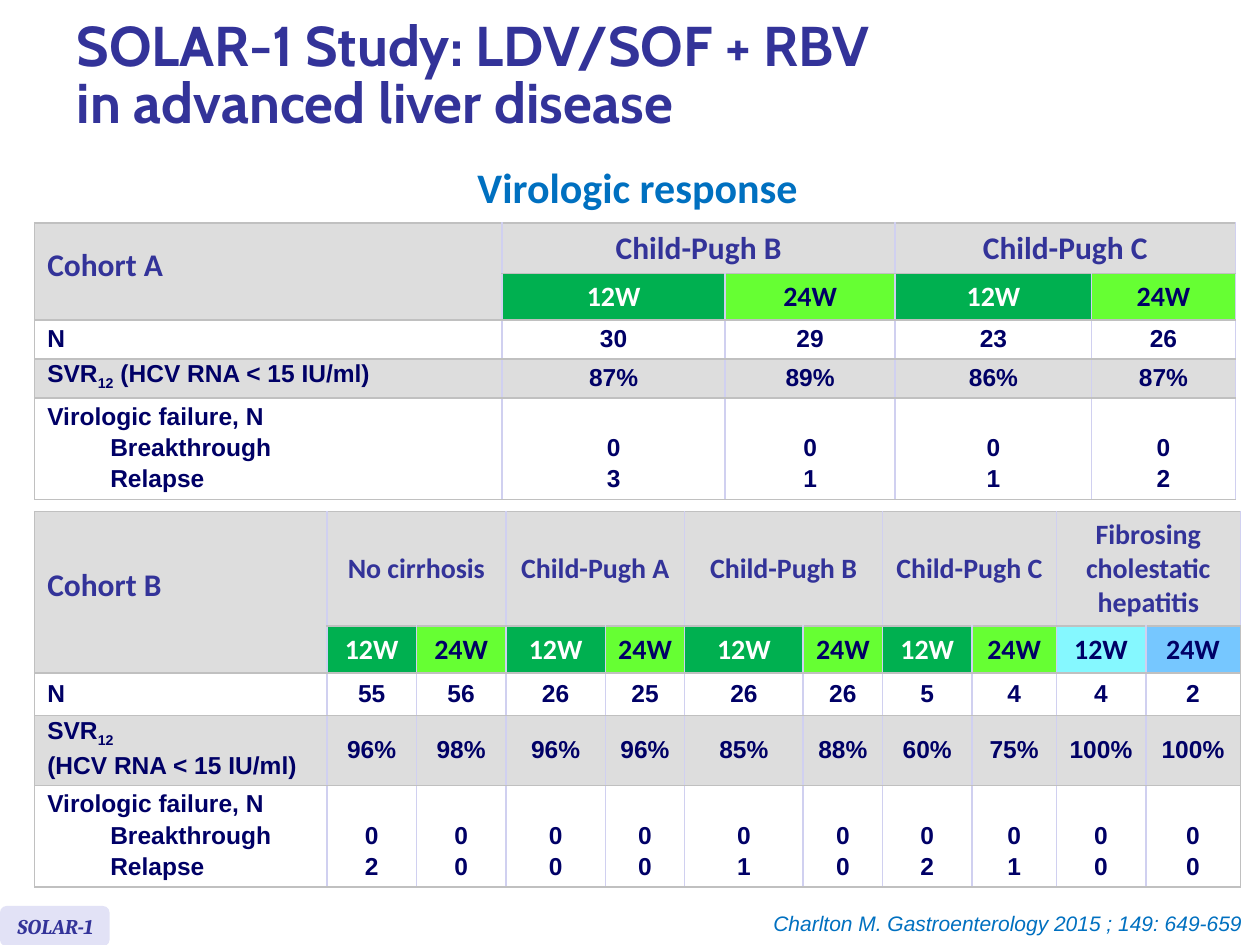
from lxml import etree
from pptx import Presentation, util as u
from pptx.dml.color import RGBColor
from pptx.enum import shapes, text
from pptx.oxml.ns import qn

COLOURS = dict(indigo="333399", navy="000066", blue="0070C0", white="FFFFFF", grey="DDDDDD",
               green="00B050", lime="66FF33", cyan="85F8FF", sky="76C7FF", badge="E2E2F6",
               rule="C0C0C0", divider="D0D0F0")
LEFT, CENTRE, RIGHT = text.PP_ALIGN.LEFT, text.PP_ALIGN.CENTER, text.PP_ALIGN.RIGHT
TITLE = dict(name="Cabin", size=32, bold=True, colour="indigo", align=LEFT, leading=0.85)
HEADING = dict(name="Calibri", size=24, bold=True, colour="blue", align=CENTRE, leading=u.Pt(15.2))
CITATION = dict(name="Arial", size=12, italic=True, colour="blue", align=RIGHT)
BADGE = dict(name="Cambria", size=12, bold=True, italic=True, colour="indigo", align=LEFT)
GROUP = dict(name="Calibri", size=18, bold=True, colour="indigo", align=CENTRE)
COHORT = dict(GROUP, align=LEFT, leading=u.Pt(15))
WEEKS = dict(GROUP, size=16)
VALUE = dict(name="Arial", size=14, bold=True, colour="navy", align=CENTRE, leading=u.Pt(15))
LABEL = dict(VALUE, align=LEFT)
GAP = u.Pt(2.8)
SUBSCRIPT = "₁₂"


def grid(*counts):
    """Turn counts of grid cells, 100 across and 75 down the slide, into lengths."""
    return [int(n * deck.slide_width / 100) for n in counts]


def write(frame, wording, style):
    """Fill a frame: \\n starts a paragraph, \\v breaks a line, SUBSCRIPT is lowered."""
    for i, paragraph in enumerate(wording.split("\n")):
        p = frame.paragraphs[0] if i == 0 else frame.add_paragraph()
        p.alignment = style["align"]
        if "leading" in style:
            p.line_spacing = style["leading"]
        if i:
            p.space_before = GAP
        for j, line in enumerate(paragraph.split("\v")):
            if j:
                p.add_line_break()
            for piece in filter(None, line.partition(SUBSCRIPT)):
                run = p.add_run()
                run.text = "12" if piece == SUBSCRIPT else piece
                run.font.size = u.Pt(style["size"])
                run.font.color.rgb = RGBColor.from_string(COLOURS[style["colour"]])
                for key in ("name", "bold", "italic"):
                    setattr(run.font, key, style.get(key))
                if piece == SUBSCRIPT:
                    run.font._element.set("baseline", "-25000")


deck = Presentation()
deck.slide_width, deck.slide_height = u.Inches(10), u.Inches(7.5)
slide = deck.slides.add_slide(deck.slide_layouts[5])

title = slide.shapes.title
title.left, title.top, title.width, title.height = grid(5.1, 0.8, 91.3, 10.7)
title.text_frame.auto_size = text.MSO_AUTO_SIZE.NONE
title.text_frame.vertical_anchor = text.MSO_ANCHOR.MIDDLE
write(title.text_frame, "SOLAR-1 Study: LDV/SOF + RBV\vin advanced liver disease", TITLE)

badge = slide.shapes.add_group_shape()
plate = badge.shapes.add_shape(shapes.MSO_SHAPE.ROUNDED_RECTANGLE, *grid(0, 71.9, 8.7, 3.2))
plate.shadow.inherit = False
plate.fill.solid()
plate.fill.fore_color.rgb = RGBColor.from_string(COLOURS["badge"])
plate.line.fill.background()

for parent, place, wording, style in (
    (slide, (1.2, 14.2, 98.8, 3.5), "Virologic response", HEADING),
    (slide, (59.4, 71.8, 40.2, 3), "Charlton M. Gastroenterology 2015 ; 149: 649-659", CITATION),
    (badge, (0.4, 72, 11, 3), "SOLAR-1", BADGE),
):
    frame = parent.shapes.add_textbox(*grid(*place)).text_frame
    frame.word_wrap = True
    write(frame, wording, style)

FAILURE = "Virologic failure, N\nBreakthrough\nRelapse"
GREENS = ["green", "lime"]
cohorts = [
    dict(name="Cohort A", top=17.7, heading=GROUP, edge="divider",
         columns=[37.1, 17.7, 13.5, 15.6, 11.4], rows=[4, 3.7, 3.1, 3.1, 8],
         groups=["Child-Pugh B", "Child-Pugh C"], arms=GREENS * 2,
         results={"N": ["30", "29", "23", "26"],
                  "SVR₁₂ (HCV RNA < 15 IU/ml)": ["87%", "89%", "86%", "87%"],
                  FAILURE: ["0\n3", "0\n1", "0\n1", "0\n2"]}),
    dict(name="Cohort B", top=40.6, heading=WEEKS, edge="rule",
         columns=[23.2, 7.1, 7.1, 7.9, 6.3, 9.4, 6.3, 7.1, 6.7, 7.1, 7.5],
         rows=[9.1, 3.7, 3.4, 5.5, 8],
         groups=["No cirrhosis", "Child-Pugh A", "Child-Pugh B", "Child-Pugh C",
                 "Fibrosing cholestatic hepatitis"],
         arms=GREENS * 4 + ["cyan", "sky"],
         results={"N": ["55", "56", "26", "25", "26", "26", "5", "4", "4", "2"],
                  "SVR₁₂\n(HCV RNA < 15 IU/ml)": ["96%", "98%", "96%", "96%", "85%", "88%",
                                                  "60%", "75%", "100%", "100%"],
                  FAILURE: [f"0\n{relapses}" for relapses in (2, 0, 0, 0, 1, 0, 2, 1, 0, 0)]}),
]

for cohort in cohorts:
    columns, rows = cohort["columns"], cohort["rows"]
    last = len(columns) - 1
    table = slide.shapes.add_table(
        len(rows), len(columns), *grid(2.75, cohort["top"], sum(columns), sum(rows))).table
    table.first_row = table.horz_banding = False
    for column, width in zip(table.columns, grid(*columns)):
        column.width = width
    for row, height in zip(table.rows, grid(*rows)):
        row.height = height

    table.cell(0, 0).merge(table.cell(1, 0))
    write(table.cell(0, 0).text_frame, cohort["name"], COHORT)
    for i, group in enumerate(cohort["groups"]):
        first = table.cell(0, 2 * i + 1)
        first.merge(table.cell(0, 2 * i + 2))
        write(first.text_frame, group, cohort["heading"])
    for c, arm in enumerate(cohort["arms"], 1):
        colour = "white" if arm == "green" else "navy"
        write(table.cell(1, c).text_frame, "12W" if c % 2 else "24W", dict(WEEKS, colour=colour))
    for r, (label, values) in enumerate(cohort["results"].items(), 2):
        write(table.cell(r, 0).text_frame, label, LABEL)
        for c, value in enumerate(values, 1):
            write(table.cell(r, c).text_frame, value, VALUE)
    for cause in table.cell(4, 0).text_frame.paragraphs[1:]:
        cause.level = 1
        cause._p.get_or_add_pPr().set("marL", str(u.Inches(0.5)))

    for r in range(len(rows)):
        for c in range(len(columns)):
            cell = table.cell(r, c)
            # Failure counts line up with the last lines of their label
            counts = r == 4 and c > 0
            cell.vertical_anchor = text.MSO_ANCHOR.BOTTOM if counts else text.MSO_ANCHOR.MIDDLE
            fill = cohort["arms"][c - 1] if r == 1 and c else "grey" if r in (0, 1, 3) else "white"
            cell.fill.solid()
            cell.fill.fore_color.rgb = RGBColor.from_string(COLOURS[fill])
            borders = dict(lnL="divider" if c else "rule",
                           lnR=cohort["edge"] if c == last else "divider",
                           lnT="rule", lnB="rule")
            for i, (side, colour) in enumerate(borders.items()):
                border = etree.Element(qn(f"a:{side}"), w=str(u.Pt(1)))
                solid = etree.SubElement(border, qn("a:solidFill"))
                etree.SubElement(solid, qn("a:srgbClr"), val=COLOURS[colour])
                cell._tc.get_or_add_tcPr().insert(i, border)

deck.save("out.pptx")
